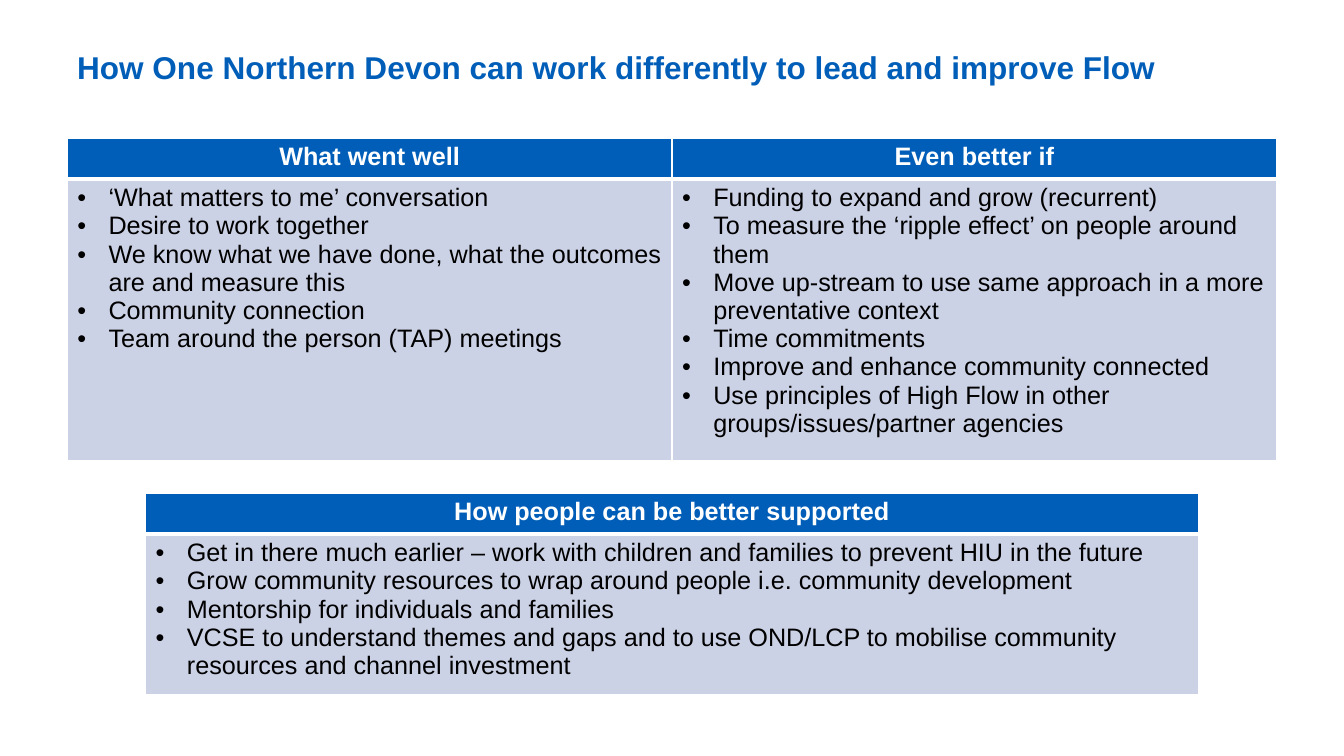
from lxml.etree import SubElement
from pptx import Presentation
from pptx.dml.color import RGBColor
from pptx.enum.text import MSO_ANCHOR as Anchor, PP_ALIGN as Align
from pptx.oxml.ns import qn
from pptx.util import Inches, Pt

BLUE = RGBColor(0x00, 0x5E, 0xB8)
PALE = RGBColor(0xCC, 0xD2, 0xE6)
WHITE = RGBColor(0xFF, 0xFF, 0xFF)
BLACK = RGBColor(0x00, 0x00, 0x00)

WENT_WELL = (
    "‘What matters to me’ conversation",
    "Desire to work together",
    "We know what we have done, what the outcomes are and measure this",
    "Community connection",
    "Team around the person (TAP) meetings",
)
EVEN_BETTER = (
    "Funding to expand and grow (recurrent)",
    "To measure the ‘ripple effect’ on people around them",
    "Move up-stream to use same approach in a more preventative context",
    "Time commitments",
    "Improve and enhance community connected",
    "Use principles of High Flow in other groups/issues/partner agencies",
)
BETTER_SUPPORTED = (
    "Get in there much earlier – work with children and families to prevent HIU in the future",
    "Grow community resources to wrap around people i.e. community development",
    "Mentorship for individuals and families",
    "VCSE to understand themes and gaps and to use OND/LCP to mobilise community resources "
    "and channel investment",
)


class FlowSlide:
    font_name = "Arial"
    title_size = 22.5
    table_size = 18
    grid_columns = 120
    grid_rows = 100
    header_rows = 5.4
    bullet_indent = Inches(0.31)

    def __init__(self, presentation):
        self.slide = presentation.slides.add_slide(presentation.slide_layouts[6])
        self.column = presentation.slide_width / self.grid_columns
        self.row = presentation.slide_height / self.grid_rows

    def place(self, top, width, height):
        left = (self.grid_columns - width) / 2
        return (round(left * self.column), round(top * self.row),
                round(width * self.column), round(height * self.row))

    def style(self, paragraph, size, color, bold):
        for run in paragraph.runs:
            run.font.name = self.font_name
            run.font.size = Pt(size)
            run.font.bold = bold
            run.font.color.rgb = color

    def title(self, text, top, width, height):
        frame = self.slide.shapes.add_textbox(*self.place(top, width, height)).text_frame
        frame.word_wrap = True
        frame.vertical_anchor = Anchor.MIDDLE
        frame.text = text
        self.style(frame.paragraphs[0], self.title_size, BLUE, True)

    def paint(self, cell, color, borders):
        properties = cell._tc.get_or_add_tcPr()
        for side, width in borders.items():
            line = SubElement(properties, qn(f"a:ln{side}"), w=str(Pt(width)))
            fill = SubElement(line, qn("a:solidFill"))
            SubElement(fill, qn("a:srgbClr"), val=str(WHITE))
        cell.fill.solid()
        cell.fill.fore_color.rgb = color

    def header(self, cell, text):
        self.paint(cell, BLUE, {"L": 1, "R": 1, "T": 1, "B": 3})
        cell.text_frame.text = text
        paragraph = cell.text_frame.paragraphs[0]
        paragraph.alignment = Align.CENTER
        self.style(paragraph, self.table_size, WHITE, True)

    def bullets(self, cell, items):
        self.paint(cell, PALE, {"L": 1, "R": 1, "B": 1})
        cell.text_frame.text = "\n".join(items)
        for paragraph in cell.text_frame.paragraphs:
            properties = paragraph._p.get_or_add_pPr()
            properties.set("marL", str(self.bullet_indent))
            properties.set("indent", str(-self.bullet_indent))
            SubElement(properties, qn("a:buFont"), typeface=self.font_name)
            SubElement(properties, qn("a:buChar"), char="•")
            self.style(paragraph, self.table_size, BLACK, False)

    def table(self, lists, top, width, height):
        frame = self.slide.shapes.add_table(2, len(lists), *self.place(top, width, height))
        table = frame.table
        table.rows[0].height = round(self.header_rows * self.row)
        table.rows[1].height = round((height - self.header_rows) * self.row)
        for index, (heading, items) in enumerate(lists.items()):
            self.header(table.cell(0, index), heading)
            self.bullets(table.cell(1, index), items)


def main():
    presentation = Presentation()
    presentation.slide_width = Inches(13.33)
    presentation.slide_height = Inches(7.5)
    flow = FlowSlide(presentation)
    flow.title("How One Northern Devon can work differently to lead and improve Flow",
               top=4, width=108, height=9.6)
    flow.table({"What went well": WENT_WELL, "Even better if": EVEN_BETTER},
               top=18.25, width=108, height=40.2)
    flow.table({"How people can be better supported": BETTER_SUPPORTED},
               top=65.2, width=94, height=25.3)
    presentation.save("out.pptx")


if __name__ == "__main__":
    main()
